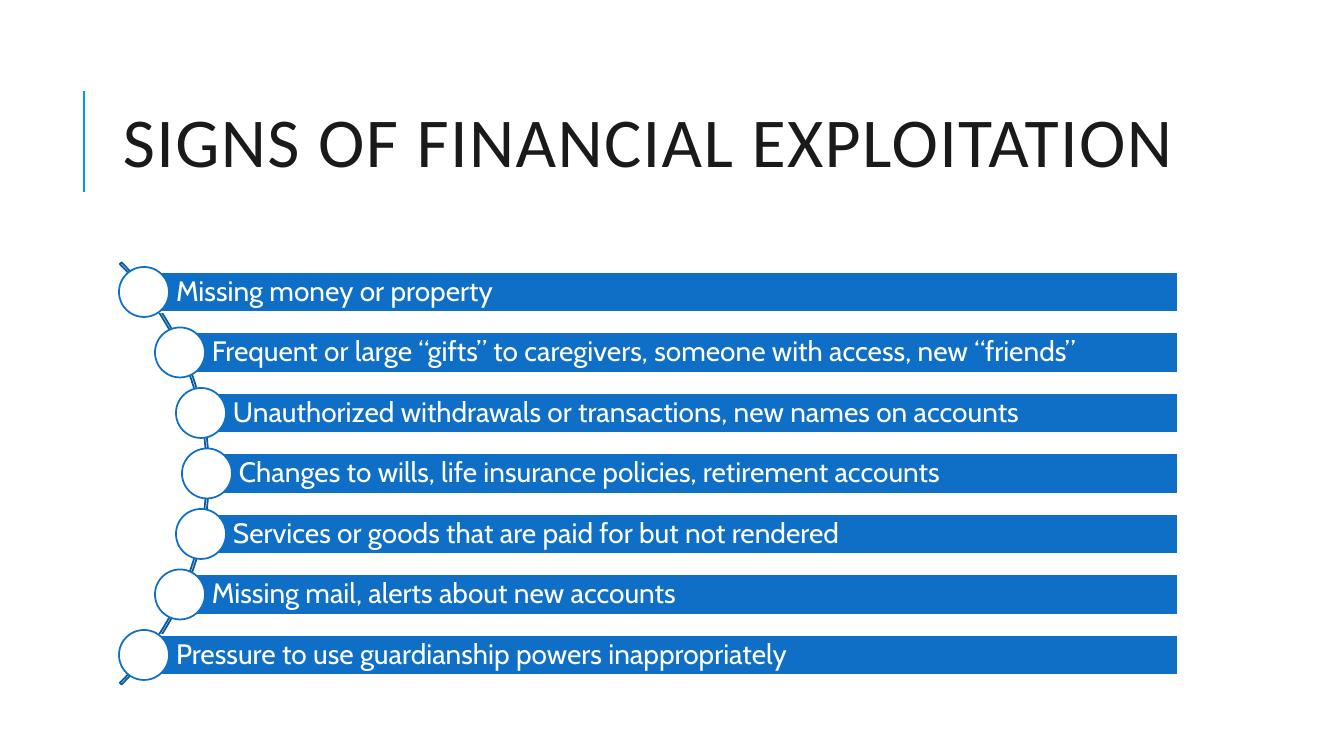
import pptx
import pptx.dml.color
import pptx.enum.shapes
import pptx.enum.text
import pptx.oxml
import pptx.oxml.ns
import pptx.util

EMU_PER_PX = 914400 / 100.8
SHAPE = pptx.enum.shapes.MSO_SHAPE
COLORS = {
    "accent": "009DD9",
    "title": "1A1A1A",
    "bar": "0F6FC6",
    "arc": "0C599F",
    "white": "FFFFFF",
}

# Left edge of each bar, which is also the centre of its circle, and its text
SIGNS = [
    (144, "Missing money or property"),
    (180, "Frequent or large “gifts” to caregivers, someone with access, new “friends”"),
    (201, "Unauthorized withdrawals or transactions, new names on accounts"),
    (207, "Changes to wills, life insurance policies, retirement accounts"),
    (201, "Services or goods that are paid for but not rendered"),
    (180, "Missing mail, alerts about new accounts"),
    (144, "Pressure to use guardianship powers inappropriately"),
]
FIRST_CENTER, LAST_CENTER = 292, 655
BAR_RIGHT, BAR_HEIGHT, CIRCLE = 1178, 40, 50


def px(n):
    return pptx.util.Emu(round(n * EMU_PER_PX))


def rgb(name):
    return pptx.dml.color.RGBColor.from_string(COLORS[name])


def add_shape(slide, kind, left, top, width, height, fill, line):
    sp = slide.shapes.add_shape(kind, px(left), px(top), px(width), px(height))
    sp.shadow.inherit = False
    if fill:
        sp.fill.solid()
        sp.fill.fore_color.rgb = rgb(fill)
    else:
        sp.fill.background()
    sp.line.color.rgb = rgb(line)
    sp.line.width = pptx.util.Pt(1.25)
    return sp


def set_text(sp, text, size, font, color, spacing, insets):
    tf = sp.text_frame
    tf.word_wrap = True
    tf.vertical_anchor = pptx.enum.text.MSO_ANCHOR.MIDDLE
    tf.margin_left, tf.margin_top, tf.margin_right, tf.margin_bottom = map(px, insets)
    tf.text = text
    p = tf.paragraphs[0]
    p.alignment = pptx.enum.text.PP_ALIGN.LEFT
    p.line_spacing = spacing
    r = p.runs[0]
    r.font.size = pptx.util.Pt(size)
    r.font.name = font
    r.font.color.rgb = rgb(color)
    return r


def add_title(slide, text):
    sp = slide.shapes.add_textbox(px(113), px(65), px(1071), px(165))
    r = set_text(sp, text, 50, "Calibri", "title", 0.8, (10, 5, 10, 5))
    r.font._element.set("spc", "100")


def add_accent_line(slide):
    line = slide.shapes.add_connector(
        pptx.enum.shapes.MSO_CONNECTOR.STRAIGHT, px(84), px(192), px(84), px(91))
    line.line.color.rgb = rgb("accent")
    line.line.width = pptx.util.Pt(1.5)
    sp_pr = line._element.spPr
    sp_pr.append(pptx.oxml.parse_xml(
        "<a:effectLst %s/>" % pptx.oxml.ns.nsdecls("a")))


def add_arc(slide):
    arc = add_shape(slide, SHAPE.BLOCK_ARC, -388, 175, 597, 597, None, "arc")
    for i, value in enumerate((189, 27, 0.004)):
        arc.adjustments[i] = value


def add_sign(slide, left, center, text):
    bar = add_shape(slide, SHAPE.RECTANGLE, left, center - BAR_HEIGHT / 2,
                    BAR_RIGHT - left, BAR_HEIGHT, "bar", "white")
    set_text(bar, text, 20, "Cabin", "white", 0.9, (32, 6, 6, 6))
    add_shape(slide, SHAPE.OVAL, left - CIRCLE / 2, center - CIRCLE / 2,
              CIRCLE, CIRCLE, "white", "bar")


def main():
    prs = pptx.Presentation()
    prs.slide_width, prs.slide_height = px(1344), px(756)
    slide = prs.slides.add_slide(prs.slide_layouts[6])

    # Heading
    add_accent_line(slide)
    add_title(slide, "SIGNS OF FINANCIAL EXPLOITATION")

    # Curved list
    add_arc(slide)
    pitch = (LAST_CENTER - FIRST_CENTER) / (len(SIGNS) - 1)
    for i, (left, text) in enumerate(SIGNS):
        add_sign(slide, left, FIRST_CENTER + i * pitch, text)

    prs.save("out.pptx")


if __name__ == "__main__":
    main()
